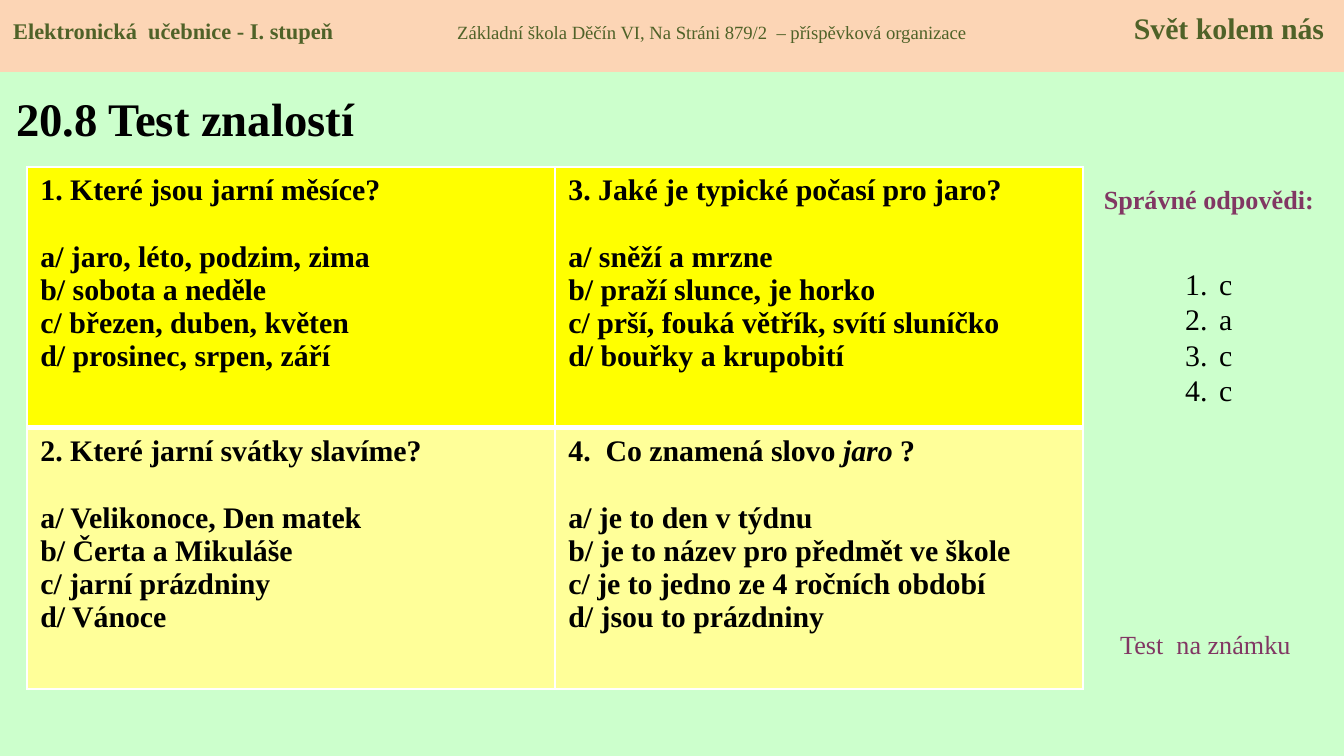
import pptx
import pptx.dml.color
import pptx.enum.shapes
import pptx.enum.text
import pptx.oxml.ns
import pptx.util
from lxml import etree

EMU_PER_PX = 914400 / 134.4
FONT = "Times New Roman"
BLACK, WHITE, PLUM, GREEN = "000000", "FFFFFF", "813763", "4F6228"
ALIGN = pptx.enum.text.PP_ALIGN
ANCHOR = pptx.enum.text.MSO_ANCHOR

HEADER = [
    ("Elektronická  učebnice - I. stupeň", 12, True),
    ("\tZákladní škola Děčín VI, Na Stráni 879/2  – příspěvková organizace", 10, False),
    ("\tSvět kolem nás", 16, True),
]
HEADER_TABS = [(444, "l"), (1311, "r")]
QUESTIONS = [
    [
        ([("1. Které jsou jarní měsíce?", False)],
         ["a/ jaro, léto, podzim, zima", "b/ sobota a neděle",
          "c/ březen, duben, květen", "d/ prosinec, srpen, září"]),
        ([("3. Jaké je typické počasí pro jaro?", False)],
         ["a/ sněží a mrzne", "b/ praží slunce, je horko",
          "c/ prší, fouká větřík, svítí sluníčko", "d/ bouřky a krupobití"]),
    ],
    [
        ([("2. Které jarní svátky slavíme?", False)],
         ["a/ Velikonoce, Den matek", "b/ Čerta a Mikuláše",
          "c/ jarní prázdniny", "d/ Vánoce"]),
        ([("4.  Co znamená slovo ", False), ("jaro ", True), ("?", False)],
         ["a/ je to den v týdnu", "b/ je to název pro předmět ve škole",
          "c/ je to jedno ze 4 ročních období", "d/ jsou to prázdniny"]),
    ],
]
ROW_FILLS = ["FFFF00", "FFFF99"]
ANSWERS = ["c", "a", "c", "c"]


def px(length):
    return pptx.util.Emu(round(length * EMU_PER_PX))


def paint(color_format, color):
    color_format.rgb = pptx.dml.color.RGBColor.from_string(color)


def fill_solid(fill, color):
    fill.solid()
    paint(fill.fore_color, color)


def set_font(font, size, color, bold=False):
    font.name = FONT
    font.size = pptx.util.Pt(size)
    font.bold = bold
    paint(font.color, color)


def add_child(parent, tag, **attributes):
    return etree.SubElement(parent, pptx.oxml.ns.qn(tag), attributes)


def add_paragraph(frame, index):
    return frame.add_paragraph() if index else frame.paragraphs[0]


def add_text(page, box, text, size, color, bold=False, align=ALIGN.LEFT, anchor=ANCHOR.TOP):
    frame = page.shapes.add_textbox(*map(px, box)).text_frame
    frame.word_wrap = True
    frame.vertical_anchor = anchor
    para = frame.paragraphs[0]
    para.text = text
    para.alignment = align
    set_font(para.font, size, color, bold)


def add_header(page, box):
    band = page.shapes.add_shape(pptx.enum.shapes.MSO_SHAPE.RECTANGLE, *map(px, box))
    band.shadow.inherit = False
    fill_solid(band.fill, "FCD5B5")
    band.line.fill.background()
    frame = band.text_frame
    frame.word_wrap = True
    frame.vertical_anchor = ANCHOR.TOP
    frame.margin_top = px(10)
    para = frame.paragraphs[0]
    para.alignment = ALIGN.LEFT
    tabs = add_child(para._p.get_or_add_pPr(), "a:tabLst")
    for position, align in HEADER_TABS:
        add_child(tabs, "a:tab", pos=str(px(position)), algn=align)
    for text, size, bold in HEADER:
        span = para.add_run()
        span.text = text
        set_font(span.font, size, GREEN, bold)


def set_borders(cell, widths):
    properties = cell._tc.get_or_add_tcPr()
    for side, width in zip("LRTB", widths):
        line = add_child(properties, f"a:ln{side}", w=str(pptx.util.Pt(width)))
        add_child(add_child(line, "a:solidFill"), "a:srgbClr", val=WHITE)


def fill_question(cell, question, options):
    frame = cell.text_frame
    for index, spans in enumerate([question] + [[(option, False)] for option in options]):
        para = add_paragraph(frame, index)
        set_font(para.font, 16, BLACK, True)
        for text, italic in spans:
            span = para.add_run()
            span.text = text
            if italic:
                span.font.italic = True
    frame.paragraphs[0].space_after = pptx.util.Pt(18)


def add_quiz(page, box):
    table = page.shapes.add_table(2, 2, *map(px, box)).table
    for row, questions in enumerate(QUESTIONS):
        for column, (question, options) in enumerate(questions):
            cell = table.cell(row, column)
            set_borders(cell, (1, 1, 3 if row else 1, 1 if row else 3))
            fill_solid(cell.fill, ROW_FILLS[row])
            fill_question(cell, question, options)


def add_answers(page, box):
    frame = page.shapes.add_textbox(*map(px, box)).text_frame
    frame.word_wrap = True
    frame.margin_top = px(44)
    for index, answer in enumerate(ANSWERS):
        para = add_paragraph(frame, index)
        para.text = answer
        para.line_spacing = pptx.util.Pt(19)
        set_font(para.font, 16, BLACK)
        properties = para._p.get_or_add_pPr()
        properties.set("marL", str(px(34)))
        properties.set("indent", str(px(-34)))
        numbering = etree.Element(pptx.oxml.ns.qn("a:buAutoNum"), type="arabicPeriod")
        properties.find(pptx.oxml.ns.qn("a:defRPr")).addprevious(numbering)


def add_sidebar(page, box):
    left, top, width, height = box
    add_text(page, (left, top, width, 46), "Správné odpovědi:", 14, PLUM, True, ALIGN.CENTER)
    add_answers(page, (left + 90, top + 45, 74, 267))
    add_text(page, (left + 25, top + height - 46, 211, 46), "Test  na známku", 14, PLUM)


def main():
    deck = pptx.Presentation()
    deck.slide_width, deck.slide_height = px(1344), px(756)
    page = deck.slides.add_slide(deck.slide_layouts[6])
    fill_solid(page.background.fill, "CCFFCC")
    add_header(page, (0, 0, 1344, 72))
    add_text(page, (3, 74, 429, 87), "20.8 Test znalostí", 25, BLACK, True, anchor=ANCHOR.MIDDLE)
    add_quiz(page, (27, 167, 1056, 522))
    add_sidebar(page, (1082, 177, 254, 491))
    deck.save("out.pptx")


if __name__ == "__main__":
    main()
